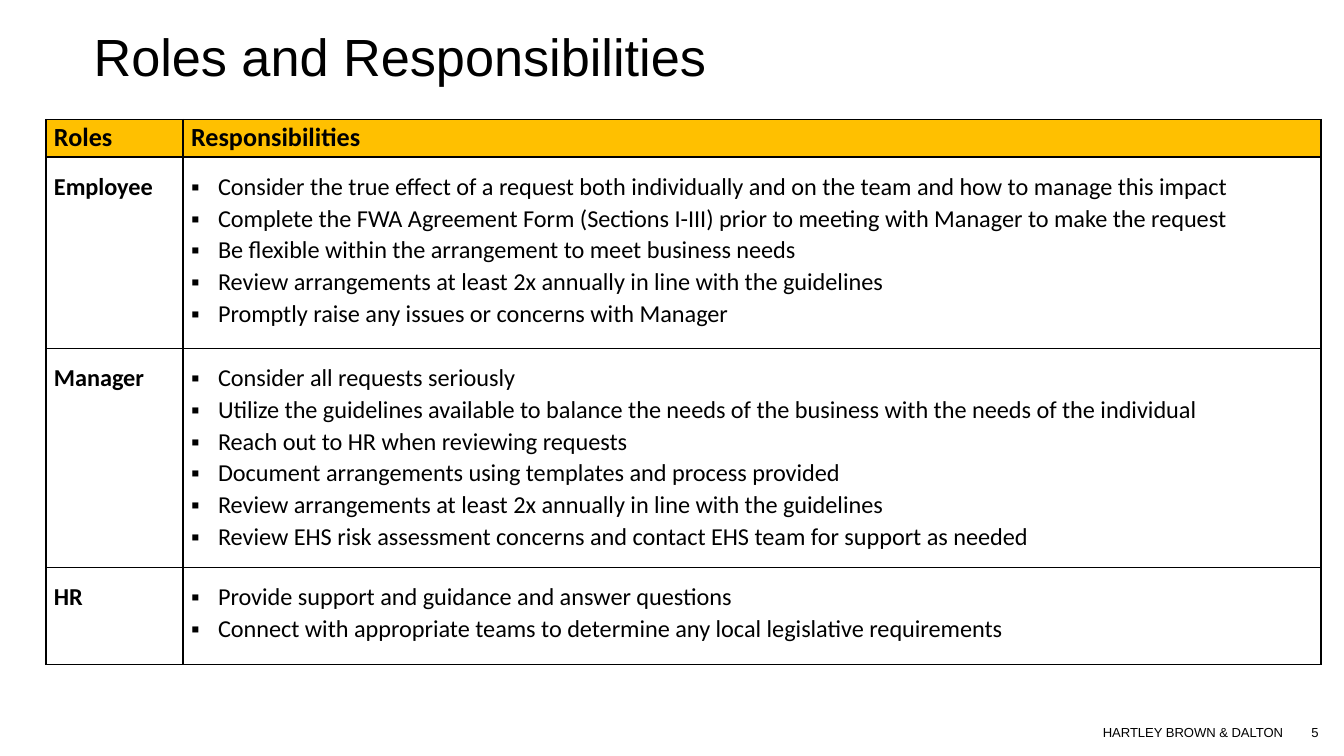
from lxml import etree
from pptx import Presentation
from pptx.dml.color import RGBColor
from pptx.enum.text import MSO_ANCHOR
from pptx.oxml.ns import qn
from pptx.util import Cm, Pt

TOP = MSO_ANCHOR.TOP
COLORS = {"text": "000000", "border": "000000", "header": "FFC000", "body": "FFFFFF"}

ROLES = [
    ("Employee", 3.61, [
        "Consider the true effect of a request both individually and on the team and how to manage this impact",
        "Complete the FWA Agreement Form (Sections I-III) prior to meeting with Manager to make the request",
        "Be flexible within the arrangement to meet business needs",
        "Review arrangements at least 2x annually in line with the guidelines",
        "Promptly raise any issues or concerns with Manager",
    ]),
    ("Manager", 4.14, [
        "Consider all requests seriously",
        "Utilize the guidelines available to balance the needs of the business with the needs of the individual",
        "Reach out to HR when reviewing requests",
        "Document arrangements using templates and process provided",
        "Review arrangements at least 2x annually in line with the guidelines",
        "Review EHS risk assessment concerns and contact EHS team for support as needed",
    ]),
    ("HR", 1.83, [
        "Provide support and guidance and answer questions",
        "Connect with appropriate teams to determine any local legislative requirements",
    ]),
]


def format_text(para, font_name, size, bold=False):
    for span in para.runs:
        span.font.name = font_name
        span.font.size = Pt(size)
        span.font.bold = bold
        span.font.color.rgb = RGBColor.from_string(COLORS["text"])


def fill_cell(cell, lines, size, bold, fill, top, bulleted=False):
    cell.margin_left = cell.margin_right = Cm(0.15)
    cell.margin_top, cell.margin_bottom = Cm(top), 0
    cell.vertical_anchor = TOP
    properties = cell._tc.get_or_add_tcPr()
    for side in ("lnL", "lnR", "lnT", "lnB"):
        border = etree.SubElement(properties, qn(f"a:{side}"), w=str(Pt(1)))
        paint = etree.SubElement(border, qn("a:solidFill"))
        etree.SubElement(paint, qn("a:srgbClr"), val=COLORS["border"])
    cell.fill.solid()
    cell.fill.fore_color.rgb = RGBColor.from_string(COLORS[fill])
    cell.text_frame.text = "\n".join(lines)
    for para in cell.text_frame.paragraphs:
        para.line_spacing = 1.07
        if bulleted:
            layout = para._p.get_or_add_pPr()
            layout.set("marL", str(Cm(0.51)))
            layout.set("indent", str(-Cm(0.51)))
            etree.SubElement(layout, qn("a:buFont"), typeface="Arial")
            etree.SubElement(layout, qn("a:buChar"), char="▪")
        format_text(para, "Calibri", size, bold)


deck = Presentation()
deck.slide_width, deck.slide_height = Cm(25.4), Cm(14.28)
page = deck.slides.add_slide(deck.slide_layouts[6])

# Footer: company and page number on right-aligned tab stops
box = page.shapes.add_textbox(Cm(13.97), Cm(13.56), Cm(11.23), Cm(0.56))
box.text_frame.word_wrap = True
para = box.text_frame.paragraphs[0]
para.text = "\tHARTLEY BROWN & DALTON\t5"
tabs = etree.SubElement(para._p.get_or_add_pPr(), qn("a:tabLst"))
for stop in (10.03, 10.7):
    etree.SubElement(tabs, qn("a:tab"), pos=str(Cm(stop)), algn="r")
format_text(para, "Arial", 7)

# Title
box = page.shapes.add_textbox(Cm(1.52), Cm(0.46), Cm(21.59), Cm(2.41))
box.text_frame.word_wrap = True
para = box.text_frame.paragraphs[0]
para.text = "Roles and Responsibilities"
para.line_spacing = 0.9
format_text(para, "Arial", 28)

# Table of roles
table = page.shapes.add_table(
    len(ROLES) + 1, 2, Cm(0.87), Cm(2.26), Cm(24.1), Cm(10.29)).table
table.columns[0].width, table.columns[1].width = Cm(2.59), Cm(21.51)
table.rows[0].height = Cm(0.71)
for column, heading in enumerate(("Roles", "Responsibilities")):
    fill_cell(table.cell(0, column), [heading], 14, True, "header", 0)
for row, (role, height, duties) in enumerate(ROLES, start=1):
    table.rows[row].height = Cm(height)
    fill_cell(table.cell(row, 0), [role], 13, True, "body", 0.25)
    fill_cell(table.cell(row, 1), duties, 13, False, "body", 0.25, bulleted=True)

deck.save("out.pptx")
